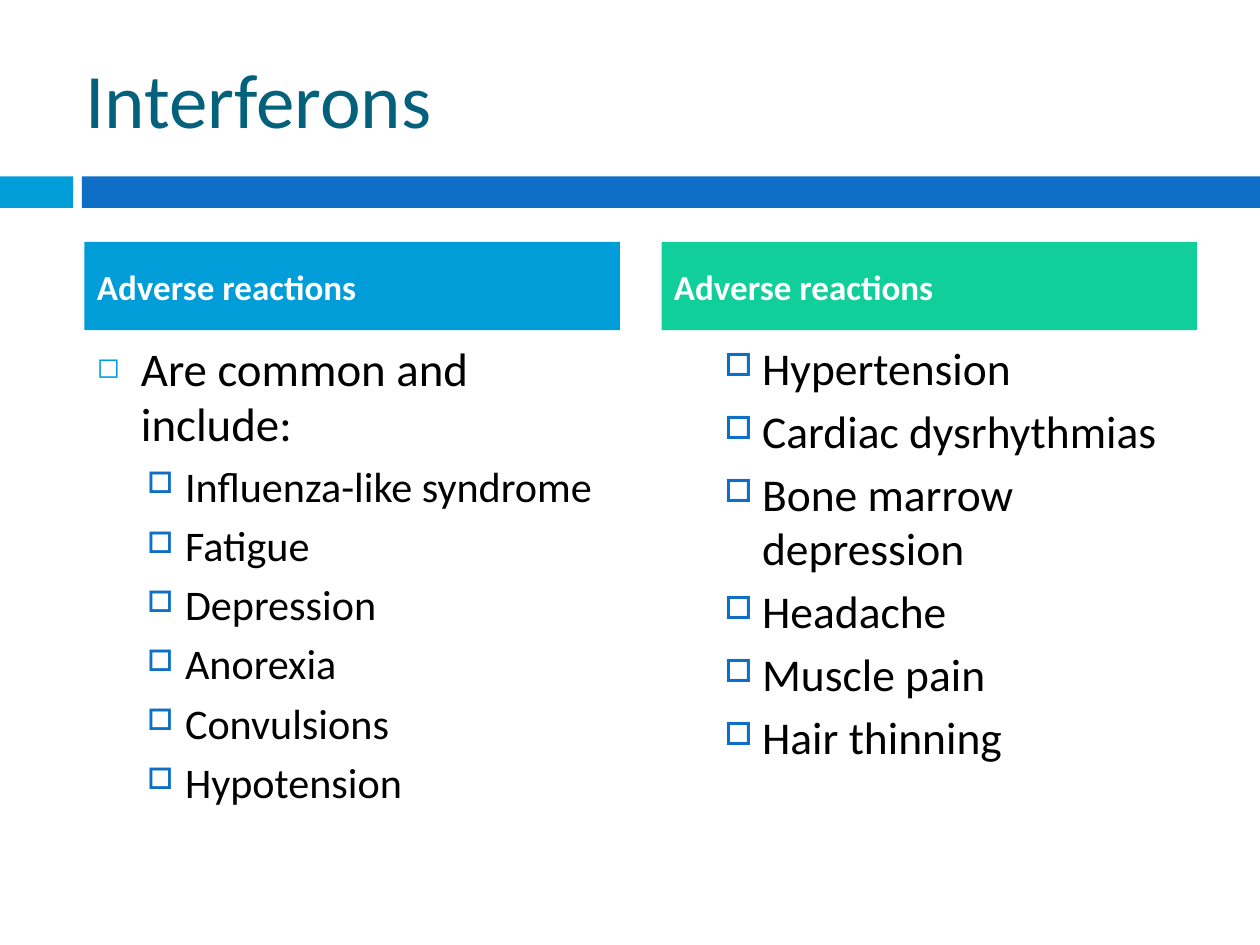
"""Build the Interferons slide with two columns of adverse reactions."""
from lxml import etree
from pptx import Presentation
from pptx import util as u
from pptx.dml import color
from pptx.enum import shapes, text
from pptx.oxml import ns

HUES = {"sky": "009DD9", "blue": "0F6FC6", "green": "10CF9B",
        "teal": "04617B", "black": "000000", "white": "FFFFFF"}

deck = Presentation()
deck.slide_width, deck.slide_height = u.Inches(10), u.Inches(7.5)
slide = deck.slides.add_slide(deck.slide_layouts[6])


def block(x, y, w, h, fill=None):
    box = slide.shapes.add_shape(shapes.MSO_SHAPE.RECTANGLE, *map(u.Inches, (x, y, w, h))) \
        if fill else slide.shapes.add_textbox(*map(u.Inches, (x, y, w, h)))
    if fill:
        box.shadow.inherit = False
        box.fill.solid()
        box.fill.fore_color.rgb = color.RGBColor.from_string(HUES[fill])
        box.line.fill.background()
    box.text_frame.word_wrap = True
    return box.text_frame


def write(frame, words, size, hue="black", bold=False, gap=0, line=None,
          first=True, middle=False, mark=None):
    para = frame.paragraphs[0] if first else frame.add_paragraph()
    para.alignment = text.PP_ALIGN.LEFT
    para.space_before = u.Pt(gap)
    para.line_spacing = line
    if middle:
        frame.vertical_anchor = text.MSO_ANCHOR.MIDDLE
    run = para.add_run()
    run.text = words
    run.font.name, run.font.size, run.font.bold = "Calibri", u.Pt(size), bold
    run.font.color.rgb = color.RGBColor.from_string(HUES[hue])
    if mark:
        sign, tint, scale, left, hang, level = mark
        para.level = level
        props = para._p.get_or_add_pPr()
        props.set("marL", str(u.Inches(left)))
        props.set("indent", str(-u.Inches(hang)))
        shade = etree.SubElement(props, ns.qn("a:buClr"))
        etree.SubElement(shade, ns.qn("a:srgbClr"), val=HUES[tint])
        etree.SubElement(props, ns.qn("a:buSzPct"), val=str(scale * 1000))
        etree.SubElement(props, ns.qn("a:buChar"), char=sign)


block(0, 1.4, 0.58, 0.25, "sky")
block(0.65, 1.4, 9.35, 0.25, "blue")
write(block(0.58, 0.3, 8.92, 0.95), "Interferons", 44, "teal", middle=True)

main = ("◻", "sky", 60, 0.35, 0.35, 0)
sub = ("□", "blue", 70, 0.7, 0.3, 1)
cols = [
    (0.67, "sky", 24.1, "Are common and include:",
     ["Influenza-like syndrome", "Fatigue", "Depression",
      "Anorexia", "Convulsions", "Hypotension"]),
    (5.25, "green", 26, None,
     ["Hypertension", "Cardiac dysrhythmias", "Bone marrow depression",
      "Headache", "Muscle pain", "Hair thinning"]),
]
for x, fill, size, lead, items in cols:
    body = block(x, 2.67, 4.25, 3.92)
    if lead:
        write(body, lead, 26.8, gap=7, line=0.98, mark=main)
    for i, item in enumerate(items):
        write(body, item, size, gap=5.5, line=0.98,
              first=i == 0 and not lead, mark=sub)
    write(block(x, 1.92, 4.25, 0.7, fill), "Adverse reactions", 20, "white",
          bold=True, gap=7, middle=True)

deck.save("out.pptx")
